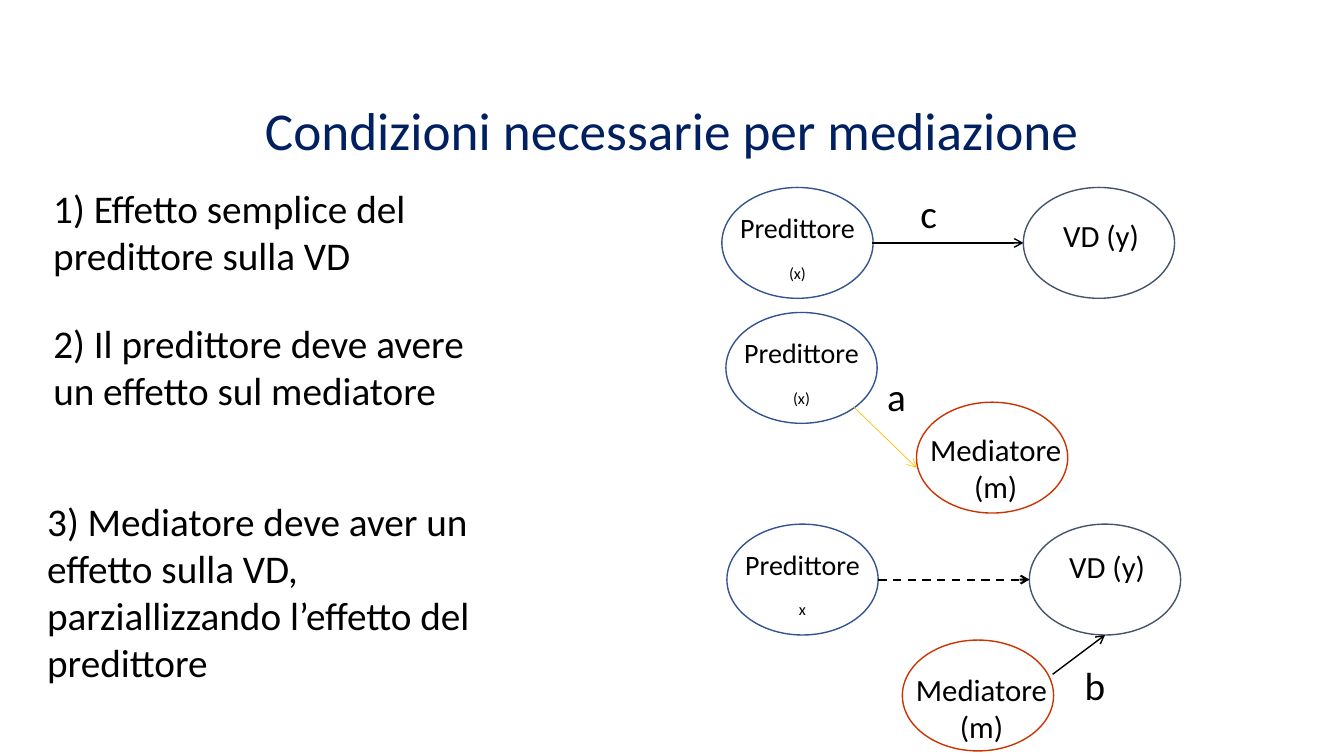
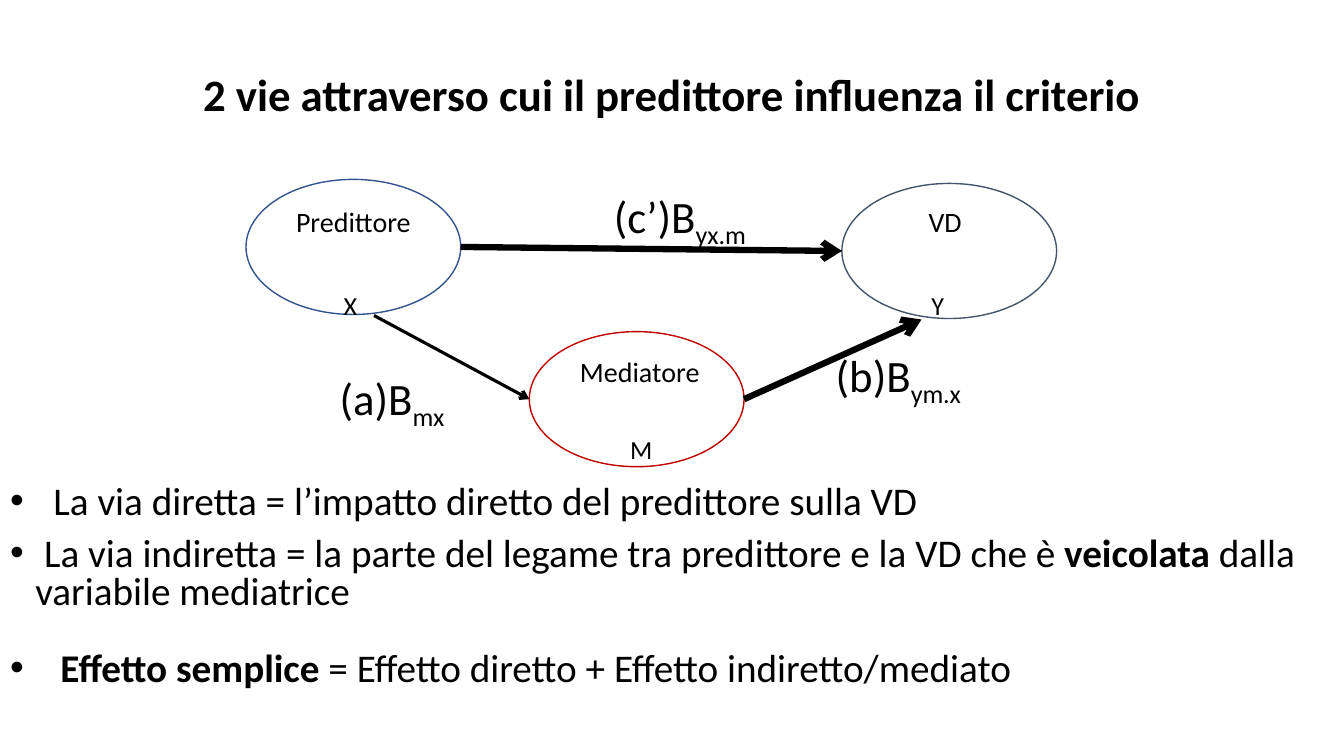
from lxml import etree
from pptx import Presentation
from pptx.dml.color import RGBColor
from pptx.enum.dml import MSO_LINE
from pptx.enum.shapes import MSO_CONNECTOR, MSO_SHAPE
from pptx.enum.text import MSO_ANCHOR, MSO_AUTO_SIZE, PP_ALIGN
from pptx.oxml.ns import qn
from pptx.util import Inches, Pt

FONT = "Calibri"
BLACK = RGBColor(0x00, 0x00, 0x00)
NAVY = RGBColor(0x00, 0x20, 0x60)
BLUE = RGBColor(0x32, 0x54, 0x91)
SLATE = RGBColor(0x44, 0x54, 0x6A)
ORANGE = RGBColor(0xCC, 0x33, 0x00)
RED = RGBColor(0xC0, 0x00, 0x00)
GOLD = RGBColor(0xFF, 0xC0, 0x00)

OVAL = MSO_SHAPE.OVAL
STRAIGHT = MSO_CONNECTOR.STRAIGHT
DASH = MSO_LINE.DASH
TOP, MIDDLE = MSO_ANCHOR.TOP, MSO_ANCHOR.MIDDLE
NO_AUTOFIT = MSO_AUTO_SIZE.NONE
LEFT, CENTER = PP_ALIGN.LEFT, PP_ALIGN.CENTER

TITLE_AND_BODY, TITLE_ONLY = 1, 5
SLIDE_WIDTH, SLIDE_HEIGHT = 13.33, 7.5
SMALL_OVAL = (1.5, 1.1)
LARGE_OVAL = (2.13, 1.34)


# Text
def place(shape, left, top, width, height):
    shape.left, shape.top = Inches(left), Inches(top)
    shape.width, shape.height = Inches(width), Inches(height)


def add_run(paragraph, text, size, color=BLACK, bold=False, sub=False):
    run = paragraph.add_run()
    run.text = text
    run.font.name = FONT
    run.font.size = Pt(size)
    run.font.bold = bold
    run.font.color.rgb = color
    if sub:
        run._r.get_or_add_rPr().set("baseline", "-25000")


def set_frame(frame, anchor, wrap=True):
    frame.auto_size = NO_AUTOFIT
    frame.vertical_anchor = anchor
    frame.word_wrap = wrap


def add_title(slide, text, top, height, size, color=BLACK, bold=False, spacing=1.0):
    title = slide.shapes.title
    place(title, 0, top, SLIDE_WIDTH, height)
    set_frame(title.text_frame, MIDDLE)
    paragraph = title.text_frame.paragraphs[0]
    paragraph.alignment = CENTER
    paragraph.line_spacing = spacing
    add_run(paragraph, text, size, color, bold)


def add_label(slide, box, lines, size, align=CENTER, wrap=True):
    """Each line is a list of (text, is_subscript) pairs."""
    label = slide.shapes.add_textbox(*map(Inches, box))
    frame = label.text_frame
    set_frame(frame, TOP, wrap)
    for index, line in enumerate(lines):
        paragraph = frame.add_paragraph() if index else frame.paragraphs[0]
        paragraph.alignment = align
        for text, sub in line:
            add_run(paragraph, text, size, sub=sub)


def add_bullet(paragraph, runs, hanging, spacing, before):
    indent = Inches(hanging)
    properties = paragraph._p.get_or_add_pPr()
    properties.set("marL", str(indent))
    properties.set("indent", str(-indent))
    paragraph.line_spacing = spacing
    paragraph.space_before = Pt(before)
    for text, bold in runs:
        add_run(paragraph, text, 28, bold=bold)


# Diagram parts
def add_oval(slide, left, top, size, color):
    oval = slide.shapes.add_shape(OVAL, *map(Inches, (left, top, *size)))
    oval.shadow.inherit = False
    oval.fill.background()
    oval.line.color.rgb = color
    oval.line.width = Pt(1)


def add_arrow(slide, start, end, width=1, color=BLACK, dash=None):
    arrow = slide.shapes.add_connector(STRAIGHT, *map(Inches, (*start, *end)))
    arrow.line.color.rgb = color
    arrow.line.width = Pt(width)
    if dash is not None:
        arrow.line.dash_style = dash
    etree.SubElement(arrow.line._get_or_add_ln(), qn("a:tailEnd"), type="arrow")
    etree.SubElement(arrow._element.spPr, qn("a:effectLst"))


def add_predictor(slide, left, top, symbol):
    add_oval(slide, left, top, SMALL_OVAL, BLUE)
    add_label(slide, (left, top + 0.18, 1.5, 0.66),
              [[("Predittore", False)], [(symbol, True)]], 20)


def add_outcome(slide, left, top, drop):
    add_oval(slide, left, top, SMALL_OVAL, SLATE)
    add_label(slide, (left + 0.16, top + drop, 1.22, 0.47),
              [[("VD (y)", False)]], 22)


def add_mediator(slide, left, top, drop):
    add_oval(slide, left, top, SMALL_OVAL, ORANGE)
    add_label(slide, (left, top + drop, 1.57, 0.84),
              [[("Mediatore", False)], [("(m)", False)]], 22)


# Slides
def build_conditions(prs):
    slide = prs.slides.add_slide(prs.slide_layouts[TITLE_ONLY])
    add_title(slide, "Condizioni necessarie per mediazione", 0.91, 0.74, 38, NAVY)

    conditions = [
        ((0.43, 1.78, 4.17, 1.04), "1) Effetto semplice del predittore sulla VD"),
        ((0.43, 3.12, 4.29, 1.04),
         "2) Il predittore deve avere un effetto sul mediatore"),
        ((0.37, 4.88, 4.8, 1.99),
         "3) Mediatore deve aver un effetto sulla VD, "
         "parziallizzando l’effetto del predittore"),
    ]
    for box, text in conditions:
        add_label(slide, box, [[(text, False)]], 28, LEFT)

    # Condition 1: predictor to outcome
    add_predictor(slide, 7.16, 1.86, "(x)")
    add_outcome(slide, 10.15, 1.86, 0.24)
    add_arrow(slide, (8.65, 2.41), (10.15, 2.41))

    # Condition 2: predictor to mediator
    add_predictor(slide, 7.2, 3.1, "(x)")
    add_mediator(slide, 9.09, 3.99, 0.23)
    add_arrow(slide, (8.47, 4.04), (9.09, 4.64), 0.5, GOLD)

    # Condition 3: mediator to outcome
    add_predictor(slide, 7.21, 5.2, "x")
    add_outcome(slide, 10.21, 5.2, 0.18)
    add_mediator(slide, 8.95, 6.35, 0.26)
    add_arrow(slide, (8.71, 5.75), (10.21, 5.75), 1.5, dash=DASH)
    add_arrow(slide, (10.44, 6.69), (10.96, 6.3))

    for effect, left, top in (("c", 9.03, 1.83), ("a", 8.7, 3.64), ("b", 10.66, 6.51)):
        add_label(slide, (left, top, 0.39, 0.57), [[(effect, False)]], 28, LEFT, False)


def build_paths(prs):
    slide = prs.slides.add_slide(prs.slide_layouts[TITLE_AND_BODY])
    add_title(slide, "2 vie attraverso cui il predittore influenza il criterio",
              0.71, 0.53, 32, bold=True, spacing=0.8)

    # Variables: oval, name box and symbol box
    variables = [
        ((2.44, 1.78), BLUE, "Predittore", (2.6, 1.98, 1.81, 0.44),
         "X", (3.31, 2.53, 0.35, 0.46)),
        ((8.35, 1.82), SLATE, "VD", (8.51, 1.98, 1.73, 0.44),
         "Y", (9.14, 2.53, 0.34, 0.46)),
        ((5.25, 3.29), RED, "Mediatore", (5.44, 3.47, 1.81, 0.44),
         "M", (6.15, 3.95, 0.45, 0.46)),
    ]
    for corner, color, name, name_box, symbol, symbol_box in variables:
        add_oval(slide, *corner, LARGE_OVAL, color)
        add_label(slide, name_box, [[(name, False)]], 20)
        add_label(slide, symbol_box, [[(symbol, True)]], 32, LEFT, False)

    # Paths and their coefficients
    paths = [
        ((4.57, 2.45), (8.35, 2.49), 4.5, "(c’)B", "yx.m", (5.99, 1.82, 1.59, 0.64)),
        ((7.38, 3.96), (9.14, 3.17), 4.5, "(b)B", "ym.x", (8.19, 3.4, 1.53, 0.64)),
        ((3.71, 3.13), (5.25, 3.96), 2.25, "(a)B", "mx", (3.27, 3.63, 1.3, 0.64)),
    ]
    for start, end, width, coefficient, subscript, box in paths:
        add_arrow(slide, start, end, width)
        add_label(slide, box, [[(coefficient, False), (subscript, True)]],
                  32, LEFT, False)

    # Explanation
    explanation = slide.placeholders[1]
    place(explanation, 0, 4.77, SLIDE_WIDTH, 2.15)
    frame = explanation.text_frame
    set_frame(frame, TOP)
    bullets = [
        ([("La via diretta = l’impatto diretto del predittore sulla VD", False)],
         0.43, 0.8, 10),
        ([(" La via indiretta = la parte del legame tra predittore e la VD che è ", False),
          ("veicolata", True), (" dalla variabile mediatrice", False)],
         0.25, 0.8, 10),
        ([("Effetto semplice ", True),
          ("= Effetto diretto + Effetto indiretto/mediato", False)],
         0.5, 1.0, 22),
    ]
    for index, (runs, hanging, spacing, before) in enumerate(bullets):
        paragraph = frame.add_paragraph() if index else frame.paragraphs[0]
        add_bullet(paragraph, runs, hanging, spacing, before)


def main():
    prs = Presentation()
    prs.slide_width = Inches(SLIDE_WIDTH)
    prs.slide_height = Inches(SLIDE_HEIGHT)
    build_conditions(prs)
    build_paths(prs)
    prs.save("out.pptx")


if __name__ == "__main__":
    main()
